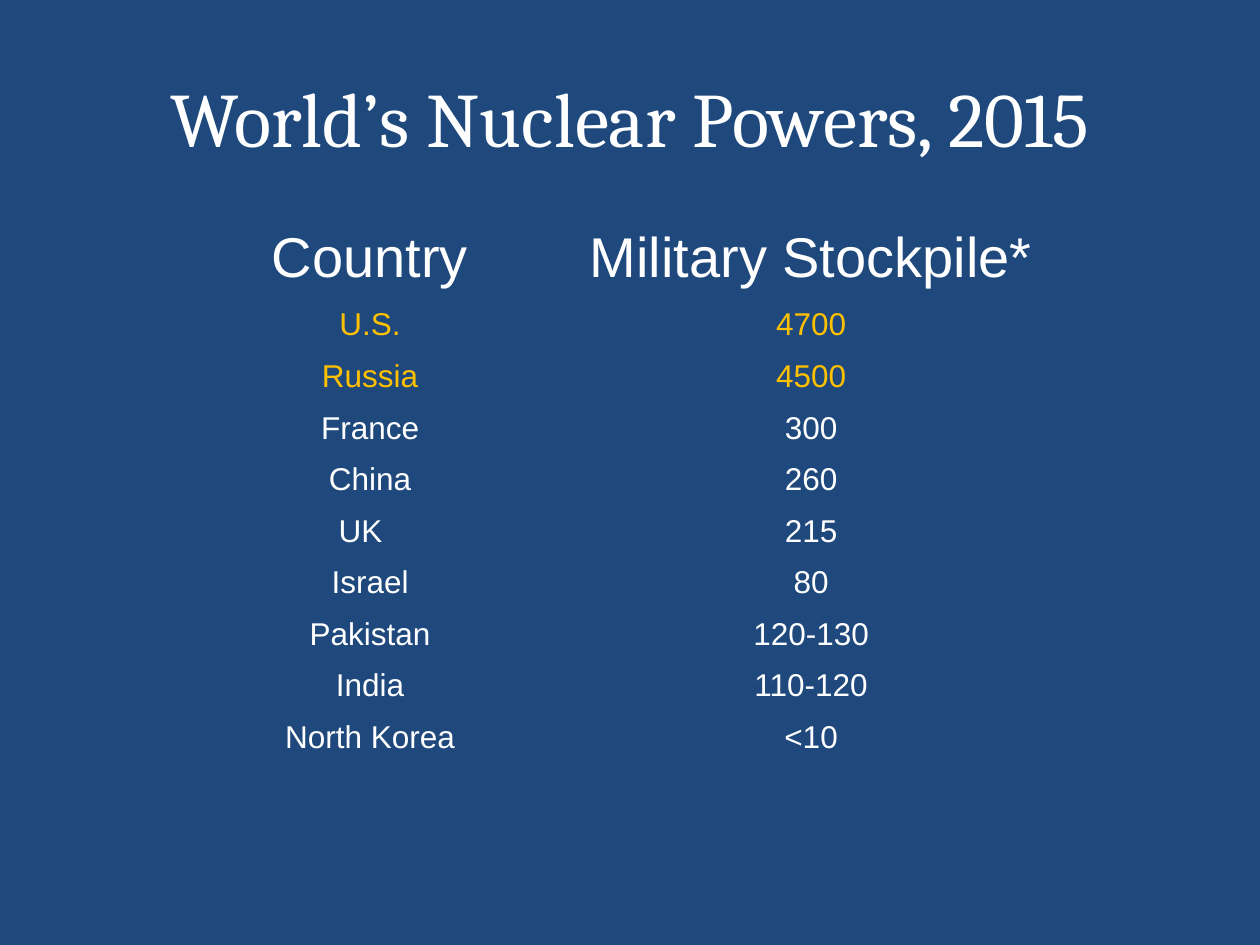
from pptx import Presentation
from pptx.dml.color import RGBColor
from pptx.enum import text
from pptx.util import Pt

TITLE = "World’s Nuclear Powers, 2015"
HEADER = ("Country", "Military Stockpile*")
STOCKPILES = [
    ("U.S.", "4700"),
    ("Russia", "4500"),
    ("France", "300"),
    ("China", "260"),
    ("UK\t", "215"),
    ("Israel", "80"),
    ("Pakistan", "120-130"),
    ("India", "110-120"),
    ("North Korea", "<10"),
]
LARGEST = ("U.S.", "Russia")

COLORS = {"background": "1F497D", "text": "FFFFFF", "highlight": "FFC000"}
NO_STYLE_NO_GRID = "{2D5ABB26-0587-4C30-8999-92F81FD0307C}"
COLUMN_WIDTHS = (183, 321)
HEADER_HEIGHT, ROW_HEIGHT = 46, 29.5
TABLE_LEFT, TABLE_TOP = 120, 126


def format_paragraph(p, font, size, color):
    p.alignment = text.PP_ALIGN.CENTER
    p.font.name = font
    p.font.size = Pt(size)
    p.font.color.rgb = RGBColor.from_string(COLORS[color])


def add_title(s):
    title = s.shapes.title
    title.left, title.top, title.width, title.height = Pt(36), Pt(21.6), Pt(648), Pt(90)
    tf = title.text_frame
    tf.text = TITLE
    tf.vertical_anchor = text.MSO_ANCHOR.MIDDLE
    format_paragraph(tf.paragraphs[0], "Cambria", 44, "text")


def add_stockpile_table(s):
    rows = [HEADER, *STOCKPILES]
    height = HEADER_HEIGHT + ROW_HEIGHT * len(STOCKPILES)
    frame = s.shapes.add_table(len(rows), len(HEADER), Pt(TABLE_LEFT), Pt(TABLE_TOP),
                               Pt(sum(COLUMN_WIDTHS)), Pt(height))
    table = frame.table
    table.first_row = table.horz_banding = False
    table._tbl.tblPr.find("{*}tableStyleId").text = NO_STYLE_NO_GRID

    for column, width in zip(table.columns, COLUMN_WIDTHS):
        column.width = Pt(width)
    for i, row in enumerate(rows):
        table.rows[i].height = Pt(ROW_HEIGHT if i else HEADER_HEIGHT)
        color = "highlight" if row[0] in LARGEST else "text"
        for j, value in enumerate(row):
            cell = table.cell(i, j)
            cell.fill.background()
            cell.text = value
            format_paragraph(cell.text_frame.paragraphs[0], "Arial", 18 if i else 32, color)


def main():
    prs = Presentation()
    prs.slide_width, prs.slide_height = Pt(720), Pt(540)
    s = prs.slides.add_slide(prs.slide_layouts[5])
    s.background.fill.solid()
    s.background.fill.fore_color.rgb = RGBColor.from_string(COLORS["background"])
    add_stockpile_table(s)
    add_title(s)
    prs.save("out.pptx")


if __name__ == "__main__":
    main()
